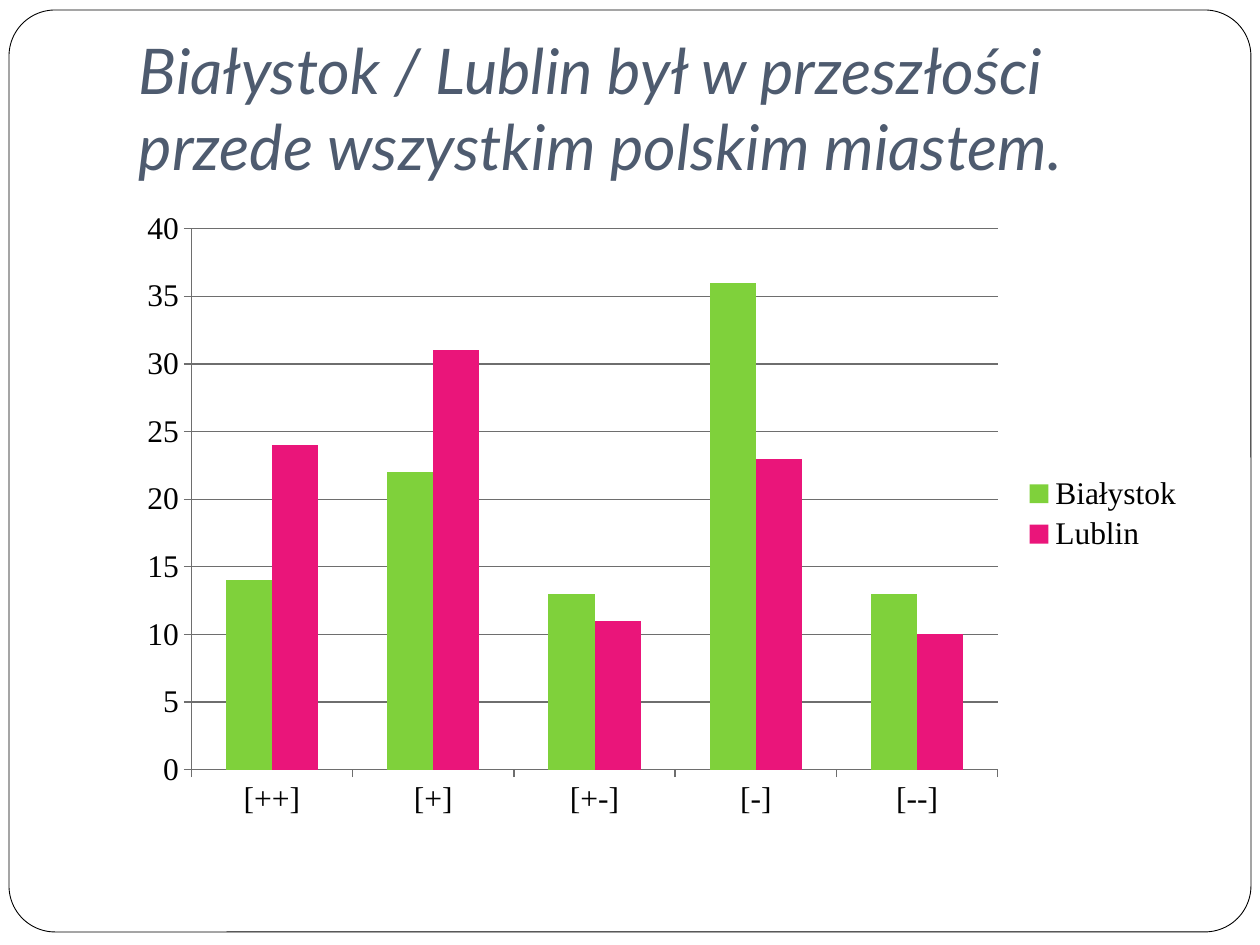
"""Build a slide comparing survey answers in Białystok and Lublin."""
from pptx import Presentation
from pptx.chart.data import CategoryChartData
from pptx.dml.color import RGBColor
from pptx.enum.chart import XL_CHART_TYPE, XL_LEGEND_POSITION, XL_TICK_MARK
from pptx.enum.shapes import MSO_SHAPE
from pptx.enum.text import MSO_ANCHOR
from pptx.util import Pt

PX = 914400 // 126
COLORS = {
    "paper": "FFFFFF",
    "ink": "000000",
    "heading": "4E5B6F",
    "grid": "6E6E6E",
    "Białystok": "7FD13B",
    "Lublin": "EA157A",
}
ANSWERS = {
    "Białystok": (14, 22, 13, 36, 13),
    "Lublin": (24, 31, 11, 23, 10),
}


def color(name):
    return RGBColor.from_string(COLORS[name])


def add_text(slide, text, *, box, font, size, ink, italic=False, anchor=MSO_ANCHOR.TOP):
    frame = slide.shapes.add_textbox(*(n * PX for n in box)).text_frame
    frame.word_wrap = True
    frame.vertical_anchor = anchor
    frame.margin_left = frame.margin_right = frame.margin_bottom = 13 * PX
    frame.margin_top = 6 * PX
    run = frame.paragraphs[0].add_run()
    run.text = text
    run.font.name = font
    run.font.size = Pt(size)
    run.font.italic = italic
    run.font.color.rgb = color(ink)


deck = Presentation()
deck.slide_width, deck.slide_height = 1260 * PX, 945 * PX
slide = deck.slides.add_slide(deck.slide_layouts[6])

border = slide.shapes.add_shape(
    MSO_SHAPE.ROUNDED_RECTANGLE, 9 * PX, 10 * PX, 1242 * PX, 922 * PX
)
border.adjustments[0] = 0.05
border.shadow.inherit = False
border.fill.solid()
border.fill.fore_color.rgb = color("paper")
border.line.color.rgb = color("ink")
border.line.width = Pt(0.5)

add_text(
    slide,
    "Białystok / Lublin był w przeszłości przede wszystkim polskim miastem.",
    box=(126, 38, 1071, 158),
    font="Lato",
    size=36,
    ink="heading",
    italic=True,
    anchor=MSO_ANCHOR.BOTTOM,
)

survey = CategoryChartData()
survey.categories = ["[++]", "[+]", "[+-]", "[-]", "[--]"]
for city, shares in ANSWERS.items():
    survey.add_series(city, shares)

answers = slide.shapes.add_chart(
    XL_CHART_TYPE.COLUMN_CLUSTERED, 126 * PX, 199 * PX, 1071 * PX, 630 * PX, survey
).chart
answers.has_title = False
answers.font.name = "Times New Roman"
answers.font.size = Pt(18)
answers.font.color.rgb = color("ink")
answers.has_legend = True
answers.legend.position = XL_LEGEND_POSITION.RIGHT
answers.legend.include_in_layout = False

columns = answers.plots[0]
columns.gap_width = 150
columns.overlap = 0
columns.vary_by_categories = False
for city_columns in columns.series:
    city_columns.format.fill.solid()
    city_columns.format.fill.fore_color.rgb = color(city_columns.name)

shares_axis = answers.value_axis
shares_axis.minimum_scale = 0
shares_axis.maximum_scale = 40
shares_axis.major_unit = 5
shares_axis.has_major_gridlines = True
for axis in (answers.category_axis, shares_axis):
    axis.major_tick_mark = XL_TICK_MARK.OUTSIDE
for ruled in (answers.category_axis, shares_axis, shares_axis.major_gridlines):
    ruled.format.line.color.rgb = color("grid")
    ruled.format.line.width = Pt(0.75)

deck.save("out.pptx")
